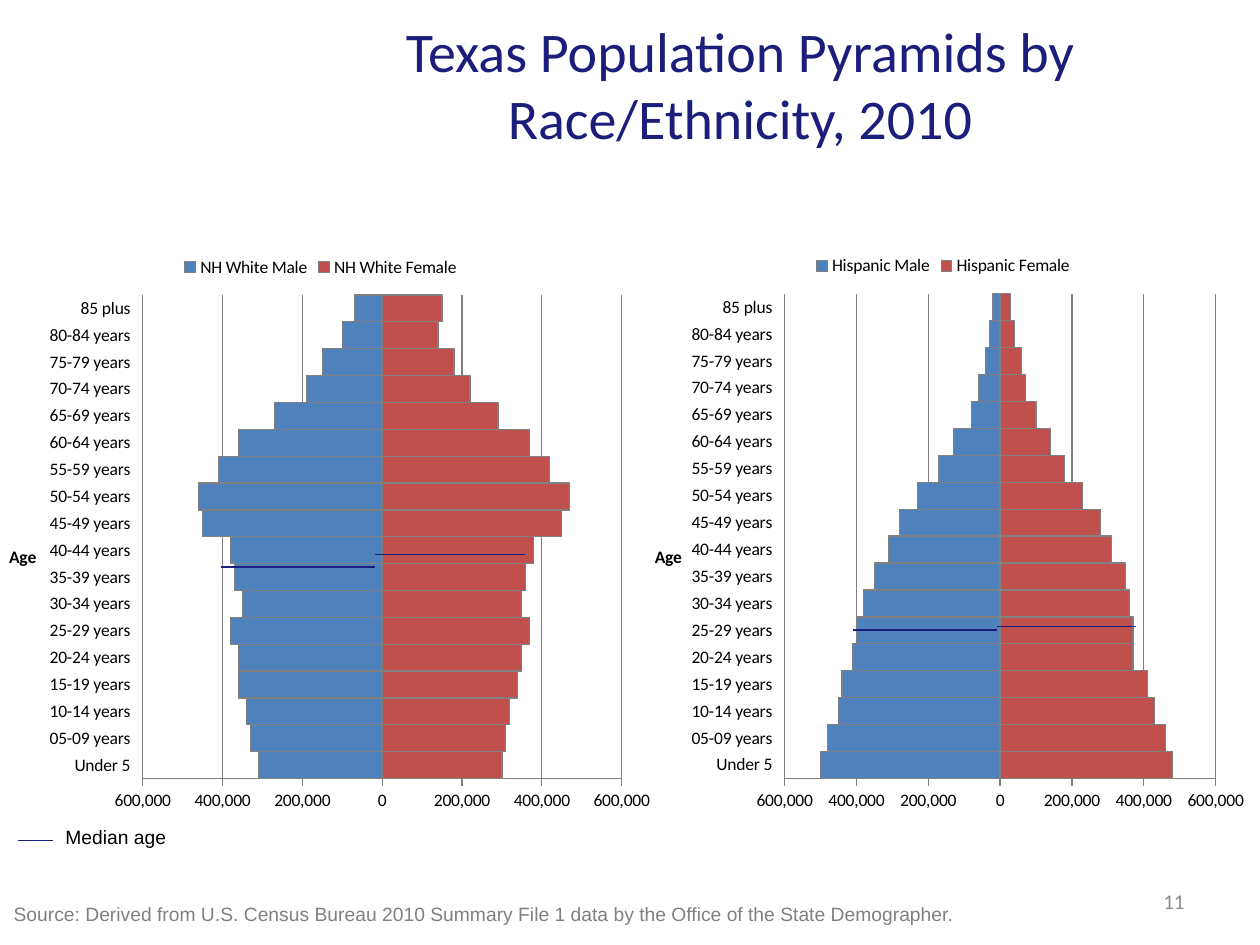
from lxml.etree import SubElement
from pptx import Presentation
from pptx.chart.data import CategoryChartData
from pptx.dml.color import RGBColor
from pptx.enum.chart import XL_CHART_TYPE, XL_LEGEND_POSITION, XL_TICK_LABEL_POSITION, XL_TICK_MARK
from pptx.enum.shapes import MSO_CONNECTOR
from pptx.enum.text import MSO_ANCHOR, PP_ALIGN
from pptx.oxml.ns import qn
from pptx.util import Inches, Pt


def rgb(value):
    return RGBColor.from_string(value)


def set_layout(parent, index, **sizes):
    layout = parent.find(qn("c:layout"))
    if layout is None:
        layout = SubElement(parent, qn("c:layout"))
        parent.insert(index, layout)
    manual = SubElement(layout, qn("c:manualLayout"))
    if "w" in sizes:
        SubElement(manual, qn("c:layoutTarget")).set("val", "inner")
    for mode in ("xMode", "yMode"):
        SubElement(manual, qn(f"c:{mode}")).set("val", "edge")
    for key, value in sizes.items():
        SubElement(manual, qn(f"c:{key}")).set("val", str(value))


NAVY, GRAY = "1B1E7A", "808080"

prs = Presentation()
prs.slide_width, prs.slide_height = Inches(10), Inches(7.5)
s = prs.slides.add_slide(prs.slide_layouts[5])

ages = (["Under 5", "05-09 years"]
        + [f"{age}-{age + 4} years" for age in range(10, 85, 5)] + ["85 plus"])
pyramids = [
    ("NH White", (-0.17, 1.93, 5.43, 4.57), (0.24, 0.7),
     [310, 330, 340, 360, 360, 380, 350, 370, 380, 450, 460, 410, 360, 270, 190, 150, 100, 70],
     [300, 310, 320, 340, 350, 370, 350, 360, 380, 450, 470, 420, 370, 290, 220, 180, 140, 150]),
    ("Hispanic", (4.97, 1.92, 5.03, 4.58), (0.25, 0.68),
     [500, 480, 450, 440, 410, 400, 380, 350, 310, 280, 230, 170, 130, 80, 60, 40, 30, 20],
     [480, 460, 430, 410, 370, 370, 360, 350, 310, 280, 230, 180, 140, 100, 70, 60, 40, 30]),
]
for group, box, (plot_x, plot_w), males, females in pyramids:
    data = CategoryChartData(number_format="#,##0;#,##0")
    data.categories = ages
    data.add_series(f"{group} Male", [-1000 * n for n in males])
    data.add_series(f"{group} Female", [1000 * n for n in females])
    chart = s.shapes.add_chart(XL_CHART_TYPE.BAR_STACKED, *map(Inches, box), data).chart
    chart.has_title = False
    chart.font.name, chart.font.size = "Calibri", Pt(10)
    chart.font.color.rgb = rgb("000000")
    chart.has_legend = True
    chart.legend.position = XL_LEGEND_POSITION.TOP
    chart.legend.include_in_layout = False

    plot = chart.plots[0]
    plot.gap_width, plot.overlap = 0, 100
    plot.vary_by_categories = False
    for series, color in zip(plot.series, ("4F81BD", "C0504D")):
        series.invert_if_negative = False
        series.format.fill.solid()
        series.format.fill.fore_color.rgb = rgb(color)
        series.format.line.color.rgb = rgb(GRAY)
        series.format.line.width = Pt(0.75)

    cat, val = chart.category_axis, chart.value_axis
    for axis in (cat, val):
        axis.major_tick_mark = XL_TICK_MARK.OUTSIDE
        axis.minor_tick_mark = XL_TICK_MARK.NONE
        axis.format.line.color.rgb = rgb(GRAY)
    cat.tick_label_position = XL_TICK_LABEL_POSITION.LOW
    val.minimum_scale, val.maximum_scale, val.major_unit = -600000, 600000, 200000
    val.tick_labels.number_format = "#,##0;#,##0"
    val.tick_labels.number_format_is_linked = False
    val.has_major_gridlines = True
    val.major_gridlines.format.line.color.rgb = rgb(GRAY)

    title = cat.axis_title
    p = title.text_frame.paragraphs[0]
    p.text = "Age"
    p.font.name, p.font.size, p.font.bold = "Calibri", Pt(10), True
    p.font.color.rgb = rgb("000000")
    body = title._element.find(".//" + qn("a:bodyPr"))
    body.set("rot", "0")
    body.set("vert", "horz")
    set_layout(title._element, 1, x=0.04, y=0.52)
    plot_area = chart._chartSpace.find(".//" + qn("c:plotArea"))
    set_layout(plot_area, 0, x=plot_x, y=0.09, w=plot_w, h=0.84)

median_lines = [(1.75, 2.98, 4.5, 0.75), (2.98, 4.17, 4.4, 0.75), (6.77, 7.91, 5, 0.75),
                (7.91, 9.02, 4.97, 0.75), (0.14, 0.42, 6.67, 1)]
for x1, x2, y, width in median_lines:
    line = s.shapes.add_connector(MSO_CONNECTOR.STRAIGHT, Inches(x1), Inches(y), Inches(x2), Inches(y))
    line.line.color.rgb = rgb(NAVY)
    line.line.width = Pt(width)
    SubElement(line._element.spPr, qn("a:effectLst"))

title = s.shapes.title
title.left, title.top, title.width, title.height = map(Inches, (1.75, 0, 8.25, 1.33))
labels = [
    (title, "Texas Population Pyramids by Race/Ethnicity, 2010",
     "Calibri", 32, NAVY, PP_ALIGN.CENTER, MSO_ANCHOR.MIDDLE, True),
    ((7.17, 6.95, 2.33, 0.4), "11",
     "Calibri", 12, "8C8C8C", PP_ALIGN.RIGHT, MSO_ANCHOR.MIDDLE, True),
    ((0.42, 6.5, 1.01, 0.29), "Median age",
     "Arial", 11, "000000", PP_ALIGN.LEFT, MSO_ANCHOR.TOP, False),
    ((0.01, 6.92, 7.76, 0.47),
     "Source: Derived from U.S. Census Bureau 2010 Summary File 1 data by the Office of the State Demographer.",
     "Arial", 11, GRAY, PP_ALIGN.LEFT, MSO_ANCHOR.BOTTOM, False),
]
for place, text, font, size, color, align, anchor, wrap in labels:
    sp = title if place is title else s.shapes.add_textbox(*map(Inches, place))
    tf = sp.text_frame
    tf.word_wrap, tf.vertical_anchor = wrap, anchor
    p = tf.paragraphs[0]
    p.text, p.alignment = text, align
    p.font.name, p.font.size = font, Pt(size)
    p.font.color.rgb = rgb(color)

prs.save("out.pptx")
